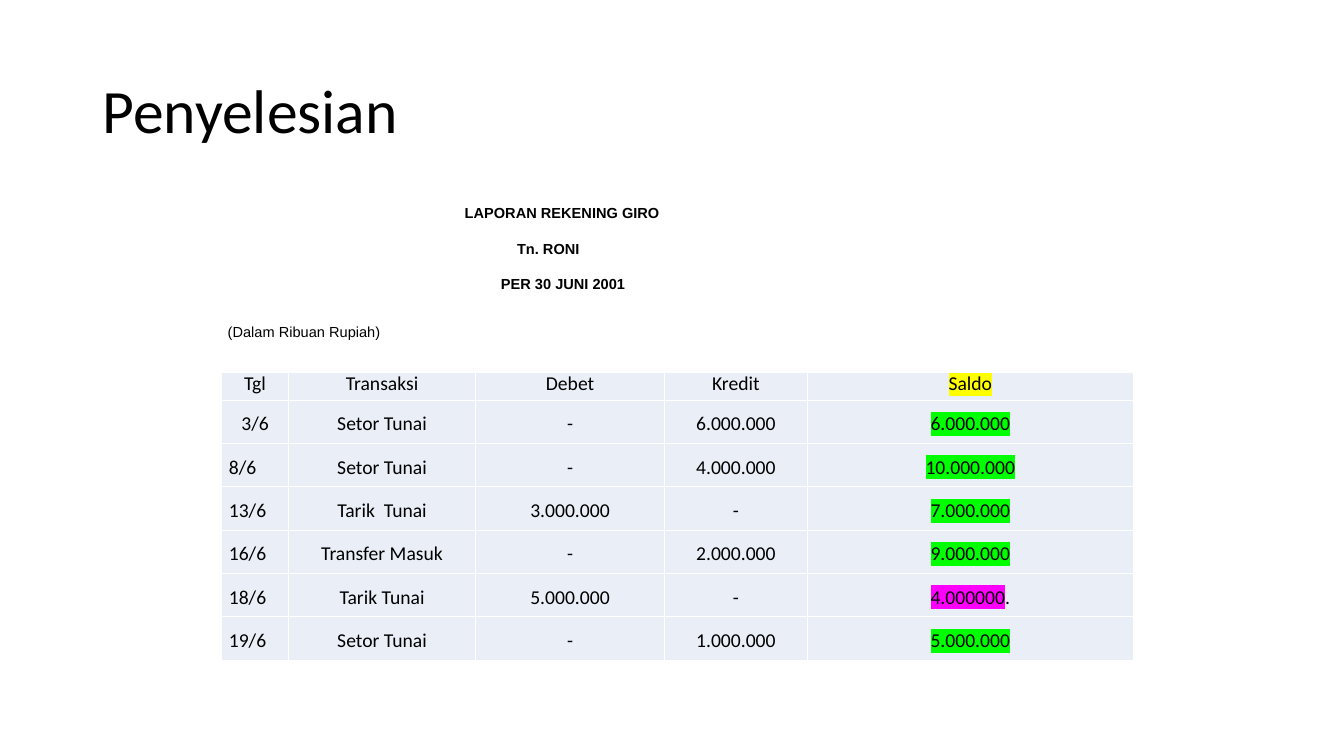
from dataclasses import dataclass

from lxml.etree import SubElement
from pptx import Presentation
from pptx.dml.color import RGBColor
from pptx.enum.text import MSO_ANCHOR as Anchor, PP_ALIGN as Align
from pptx.oxml.ns import qn
from pptx.util import Inches, Pt

BLACK, WHITE, CELL_FILL = "000000", "FFFFFF", "EAEFF7"
YELLOW, GREEN, MAGENTA = "FFFF00", "00FF00", "FF00FF"
SUBSCRIPT = -30000


@dataclass
class Line:
    text: str
    indent: float = 0


@dataclass
class TextBlock:
    left: float
    top: float
    width: float
    height: float
    lines: list[Line]
    size: float = 18
    font: str = "Arial"
    bold: bool = False
    baseline: int = SUBSCRIPT
    spacing: float = 1.0
    align: Align = Align.LEFT


@dataclass
class Entry:
    date: str
    transaction: str
    debit: str
    credit: str
    balance: str
    highlight: str = GREEN
    suffix: str = ""
    date_align: Align = Align.LEFT
    spacing: float = 1.5


TEXT_BLOCKS = [
    TextBlock(0.92, 0.4, 11.5, 1.45, [Line("Penyelesian")], size=44,
              font="Calibri", baseline=0, spacing=0.9),
    TextBlock(4.51, 1.97, 2.45, 0.81,
              [Line("LAPORAN REKENING GIRO"), Line("Tn. RONI", 0.52),
               Line("PER 30 JUNI 2001", 0.36)], bold=True),
    TextBlock(2.16, 3, 1.96, 0.4, [Line("(Dalam Ribuan Rupiah)")],
              align=Align.JUSTIFY),
]

ENTRIES = [
    Entry("Tgl", "Transaksi", "Debet", "Kredit", "Saldo", YELLOW,
          date_align=Align.CENTER, spacing=1.0),
    Entry("3/6", "Setor Tunai", "-", "6.000.000", "6.000.000",
          date_align=Align.CENTER),
    Entry("8/6", "Setor Tunai", "-", "4.000.000", "10.000.000"),
    Entry("13/6", "Tarik  Tunai", "3.000.000", "-", "7.000.000"),
    Entry("16/6", "Transfer Masuk", "-", "2.000.000", "9.000.000"),
    Entry("18/6", "Tarik Tunai", "5.000.000", "-", "4.000000", MAGENTA, "."),
    Entry("19/6", "Setor Tunai", "-", "1.000.000", "5.000.000"),
]
COLUMN_WIDTHS = [0.66, 1.86, 1.87, 1.42, 3.23]
HEADER_HEIGHT, ROW_HEIGHT = 0.28, 0.43


def color(value: str) -> RGBColor:
    return RGBColor.from_string(value)


def add_run(p, text: str, size: float, font: str, bold: bool = False,
            baseline: int = 0, highlight: str = "") -> None:
    r = p.add_run()
    r.text = text
    r.font.size = Pt(size)
    r.font.bold = bold
    r.font.color.rgb = color(BLACK)
    r.font.name = font
    props = r.font._element
    if baseline:
        props.set("baseline", str(baseline))
    if highlight:
        mark = SubElement(props, qn("a:highlight"))
        SubElement(mark, qn("a:srgbClr")).set("val", highlight)
        props.find(qn("a:solidFill")).addnext(mark)


def add_text_block(slide, block: TextBlock) -> None:
    box = slide.shapes.add_textbox(Inches(block.left), Inches(block.top),
                                   Inches(block.width), Inches(block.height))
    tf = box.text_frame
    tf.word_wrap = True
    tf.vertical_anchor = Anchor.MIDDLE
    for i, line in enumerate(block.lines):
        p = tf.add_paragraph() if i else tf.paragraphs[0]
        p.alignment = block.align
        p.line_spacing = block.spacing
        if line.indent:
            p._p.get_or_add_pPr().set("marL", str(Inches(line.indent)))
        add_run(p, line.text, block.size, block.font, block.bold, block.baseline)


def style_cell(cell) -> None:
    """Set the margins, white borders and fill of a cell."""
    cell.margin_left = cell.margin_right = Inches(0.07)
    cell.margin_top = cell.margin_bottom = 0
    props = cell._tc.get_or_add_tcPr()
    for side in ("lnL", "lnR", "lnT", "lnB"):
        border = SubElement(props, qn(f"a:{side}"), w=str(Pt(1)))
        fill = SubElement(border, qn("a:solidFill"))
        SubElement(fill, qn("a:srgbClr")).set("val", WHITE)
    cell.fill.solid()
    cell.fill.fore_color.rgb = color(CELL_FILL)


def fill_row(table, row: int, entry: Entry) -> None:
    texts = [entry.date, entry.transaction, entry.debit, entry.credit, entry.balance]
    last = len(texts) - 1
    for col, text in enumerate(texts):
        cell = table.cell(row, col)
        style_cell(cell)
        p = cell.text_frame.paragraphs[0]
        p.alignment = Align.CENTER if col else entry.date_align
        p.line_spacing = entry.spacing
        add_run(p, text, 14, "Calibri",
                highlight=entry.highlight if col == last else "")
        if col == last and entry.suffix:
            add_run(p, entry.suffix, 14, "Calibri")


def add_account_table(slide) -> None:
    heights = [HEADER_HEIGHT] + [ROW_HEIGHT] * (len(ENTRIES) - 1)
    table = slide.shapes.add_table(
        len(ENTRIES), len(COLUMN_WIDTHS), Inches(2.2), Inches(3.69),
        Inches(sum(COLUMN_WIDTHS)), Inches(sum(heights))).table
    table.first_row = table.horz_banding = False
    for column, width in zip(table.columns, COLUMN_WIDTHS):
        column.width = Inches(width)
    for i, (entry, height) in enumerate(zip(ENTRIES, heights)):
        table.rows[i].height = Inches(height)
        fill_row(table, i, entry)


def main() -> None:
    prs = Presentation()
    prs.slide_width, prs.slide_height = Inches(13.33), Inches(7.5)
    slide = prs.slides.add_slide(prs.slide_layouts[6])
    for block in TEXT_BLOCKS:
        add_text_block(slide, block)
    add_account_table(slide)
    prs.save("out.pptx")


if __name__ == "__main__":
    main()
